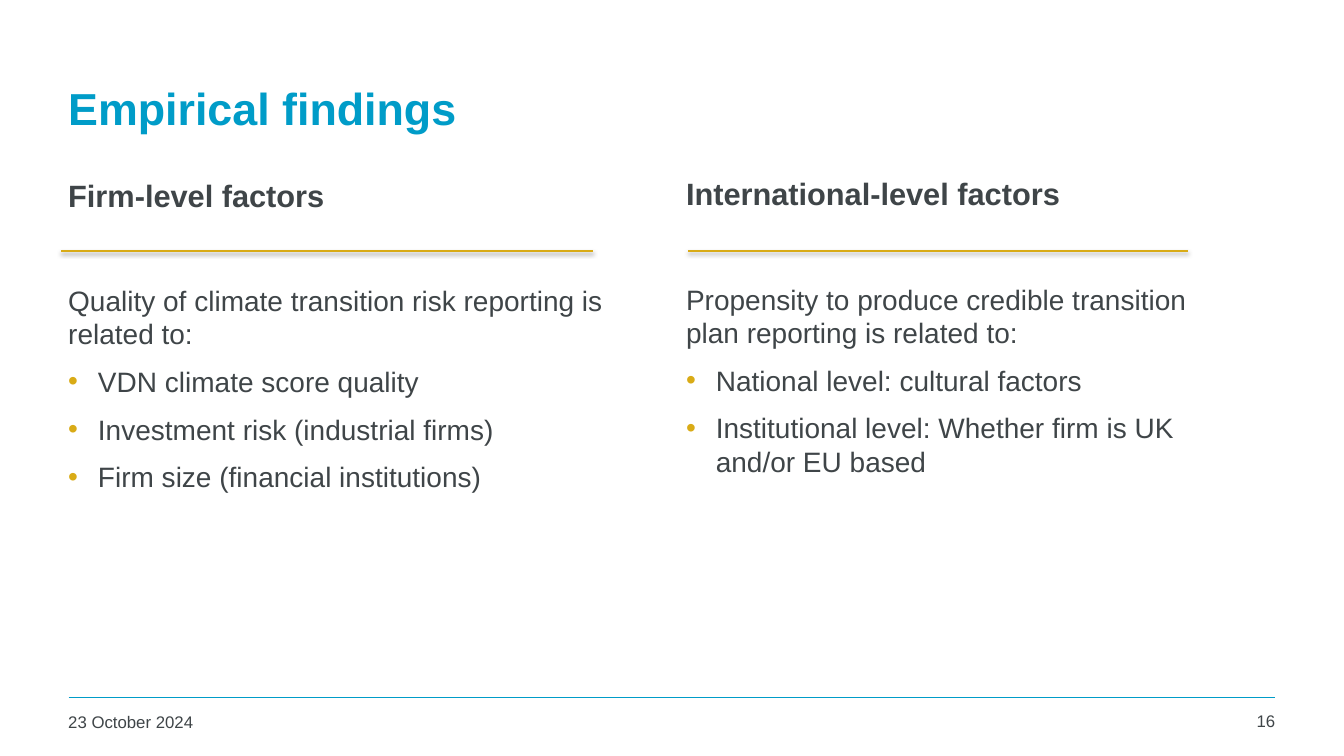
"""Build the slide on empirical findings about climate transition reporting."""
from dataclasses import dataclass
from lxml import etree
from pptx import Presentation
from pptx.dml.color import RGBColor as Rgb
from pptx.enum.shapes import MSO_CONNECTOR as Link
from pptx.enum.text import MSO_ANCHOR as Anchor, PP_ALIGN as Align
from pptx.oxml import parse_xml
from pptx.oxml.ns import nsdecls, qn
from pptx.util import Cm, Pt

TITLE = "Empirical findings"
DATE = "23 October 2024"
PAGE = "16"
COLS = [
    {
        "head": "Firm-level factors",
        "lead": "Quality of climate transition risk reporting is related to:",
        "items": [
            "VDN climate score quality",
            "Investment risk (industrial firms)",
            "Firm size (financial institutions)",
        ],
        "box": (1.47, 4.32, 14.07, 12.88),
        "rule": (1.54, 14.94),
    },
    {
        "head": "International-level factors",
        "lead": "Propensity to produce credible transition plan reporting is related to:",
        "items": [
            "National level: cultural factors",
            "Institutional level: Whether firm is UK and/or EU based",
        ],
        "box": (17.04, 4.29, 13.18, 12.09),
        "rule": (17.34, 29.95),
    },
]


@dataclass(frozen=True)
class Theme:
    """Colours, font and type sizes."""
    font: str = "Arial"
    blue: str = "009CC8"
    gold: str = "D9AB16"
    ink: str = "3F4548"
    title: int = 32
    head: int = 22
    body: int = 20
    foot: int = 12
    lead_gap: int = 50
    item_gap: int = 10
    pitch: float = 1.0
    indent: float = 0.75
    thick: float = 1.5
    thin: float = 1.25


LOOK = Theme()
RULE_Y = 6.33
FOOT_Y = 17.58


def style(para, size, color=LOOK.ink, bold=False):
    """Format every run of a paragraph."""
    for run in para.runs:
        font = run.font
        font.name, font.size, font.bold = LOOK.font, Pt(size), bold
        font.color.rgb = Rgb.from_string(color)


def add_box(slide, box, lines):
    """Add a wrapping text box with one paragraph per line."""
    frame = slide.shapes.add_textbox(*map(Cm, box)).text_frame
    frame.word_wrap = True
    frame.text = "\n".join(lines)
    return frame


def add_rule(slide, left, right, y, color, width, shade=False):
    """Draw a level line, with a soft shadow if asked."""
    line = slide.shapes.add_connector(Link.STRAIGHT, Cm(left), Cm(y), Cm(right), Cm(y))
    line.line.color.rgb = Rgb.from_string(color)
    line.line.width = Pt(width)
    effect = etree.SubElement(line._element.spPr, qn("a:effectLst"))
    if shade:
        effect.append(parse_xml(
            f'<a:outerShdw {nsdecls("a")} blurRad="{Pt(3.1)}" dist="{Pt(1.6)}" '
            'dir="5400000" rotWithShape="0"><a:srgbClr val="000000">'
            '<a:alpha val="38000"/></a:srgbClr></a:outerShdw>'))


def add_bullet(para):
    """Give a paragraph a gold bullet and a hanging indent."""
    props = para._p.get_or_add_pPr()
    props.set("marL", str(Cm(LOOK.indent)))
    props.set("indent", str(-Cm(LOOK.indent)))
    color = etree.SubElement(props, qn("a:buClr"))
    etree.SubElement(color, qn("a:srgbClr"), val=LOOK.gold)
    etree.SubElement(props, qn("a:buFont"), typeface=LOOK.font)
    etree.SubElement(props, qn("a:buChar"), char="•")


def add_col(slide, col):
    """Add one column: heading, rule, lead-in and bullets."""
    frame = add_box(slide, col["box"], [col["head"], col["lead"], *col["items"]])
    head, lead, *items = frame.paragraphs
    for para in items:
        add_bullet(para)
        para.space_before = Pt(LOOK.item_gap)
    lead.space_before = Pt(LOOK.lead_gap)
    for para in frame.paragraphs:
        para.line_spacing = LOOK.pitch
        style(para, LOOK.body)
    style(head, LOOK.head, bold=True)
    add_rule(slide, *col["rule"], RULE_Y, LOOK.gold, LOOK.thick, shade=True)


def main():
    """Build and save the slide."""
    deck = Presentation()
    deck.slide_width, deck.slide_height = Cm(33.87), Cm(19.05)
    slide = deck.slides.add_slide(deck.slide_layouts[6])
    add_rule(slide, 1.73, 32.13, FOOT_Y, LOOK.blue, LOOK.thin)

    title = add_box(slide, (1.47, 1.12, 30.71, 3.18), [TITLE])
    title.vertical_anchor = Anchor.MIDDLE
    style(title.paragraphs[0], LOOK.title, LOOK.blue, True)

    for col in COLS:
        add_col(slide, col)

    feet = [
        (DATE, (1.47, 17.81, 7.47, 0.91), Align.LEFT),
        (PAGE, (30, 17.78, 2.39, 0.94), Align.RIGHT),
    ]
    for text, box, align in feet:
        para = add_box(slide, box, [text]).paragraphs[0]
        para.alignment = align
        style(para, LOOK.foot)

    deck.save("out.pptx")


if __name__ == "__main__":
    main()
